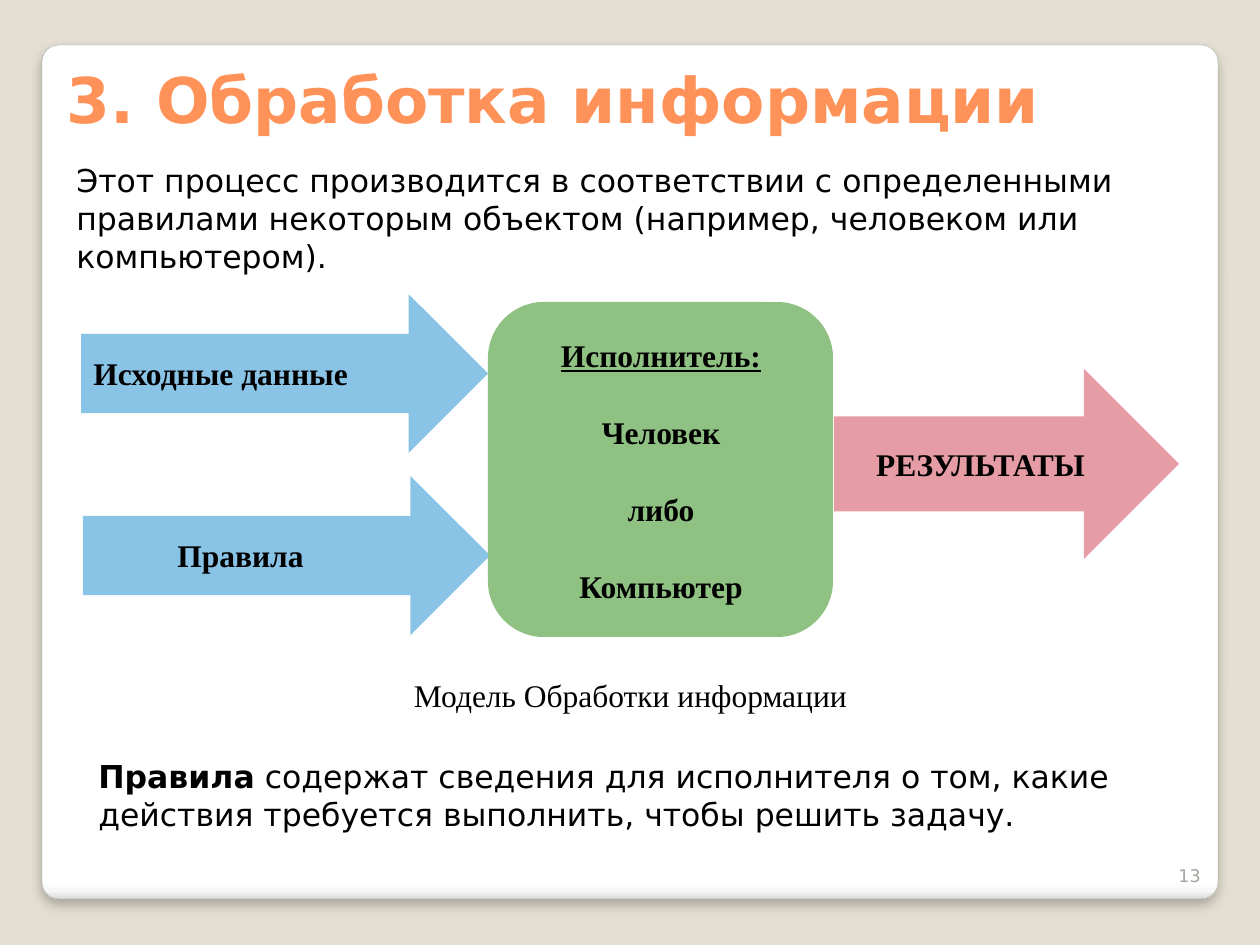
from copy import deepcopy

from pptx import Presentation
from pptx import util as u
from pptx.dml.color import RGBColor
from pptx.enum import shapes, text
from pptx.oxml import parse_xml
from pptx.oxml.ns import nsdecls

SAND = RGBColor(0xE3, 0xDE, 0xD1)
WHITE = RGBColor(0xFF, 0xFF, 0xFF)
MIST = RGBColor(0xF7, 0xF7, 0xF7)
SILVER = RGBColor(0xDA, 0xDA, 0xDA)
EDGE = RGBColor(0xA4, 0xA4, 0xA4)
ORANGE = RGBColor(0xFF, 0x92, 0x58)
BLACK = RGBColor(0x00, 0x00, 0x00)
BLUE = RGBColor(0x89, 0xC3, 0xE5)
GREEN = RGBColor(0x8E, 0xC1, 0x82)
PINK = RGBColor(0xE6, 0x9C, 0xA4)
GRAY = RGBColor(0xA8, 0xA4, 0x9B)

SANS, SERIF = "DejaVu Sans", "Times New Roman"
LEFT, MID, RIGHT = text.PP_ALIGN.LEFT, text.PP_ALIGN.CENTER, text.PP_ALIGN.RIGHT
TOP, CENTRE, BOTTOM = (text.MSO_ANCHOR.TOP, text.MSO_ANCHOR.MIDDLE,
                       text.MSO_ANCHOR.BOTTOM)
ROUND = shapes.MSO_SHAPE.ROUNDED_RECTANGLE
ARROW = shapes.MSO_SHAPE.RIGHT_ARROW

SHADE = f"""<a:outerShdw {nsdecls('a')} blurRad="76200" dist="50800" dir="5400000"
  algn="t" rotWithShape="0"><a:srgbClr val="000000"><a:alpha val="25000"/></a:srgbClr>
  </a:outerShdw>"""


class Page:
    """Holds the current slide and its text style; lengths are in px."""

    def __init__(self, deck, font=SANS, size=18, color=BLACK):
        self.slide = deck.slides.add_slide(deck.slide_layouts[6])
        self.font, self.size, self.color = font, size, color
        fill = self.slide.background.fill
        fill.solid()
        fill.fore_color.rgb = SAND

    @staticmethod
    def px(n):
        return u.Emu(round(n * 914400 / 126))

    def shape(self, kind, box, color):
        item = self.slide.shapes.add_shape(kind, *map(self.px, box))
        item.shadow.inherit = False
        item.fill.solid()
        item.fill.fore_color.rgb = color
        item.line.fill.background()
        return item

    def panel(self, box, stops):
        item = self.shape(ROUND, box, WHITE)
        item.adjustments[0] = 0.02
        item.line.color.rgb = EDGE
        item.line.width = u.Pt(0.16)
        item.fill.gradient()
        item.fill.gradient_angle = 270
        first = item.fill.gradient_stops[0]._gs
        for _ in stops[2:]:
            first.addnext(deepcopy(first))
        for stop, (place, color) in zip(item.fill.gradient_stops, stops):
            stop.position, stop.color.rgb = place, color
        item._element.xpath("./p:spPr/a:effectLst")[0].append(parse_xml(SHADE))

    def words(self, box, *lines, align=LEFT, anchor=TOP, wrap=True, gap=0,
              font=None, size=None, color=None, bold=False):
        """Each line is a string or a list of strings, one per run."""
        item = self.slide.shapes.add_textbox(*map(self.px, box))
        frame = item.text_frame
        frame.word_wrap, frame.vertical_anchor = wrap, anchor
        for i, line in enumerate(lines):
            para = frame.add_paragraph() if i else frame.paragraphs[0]
            para.alignment = align
            para.space_before = u.Pt(gap if i else 0)
            for part in [line] if isinstance(line, str) else line:
                run = para.add_run()
                run.text = part
                run.font.name = font or self.font
                run.font.size = u.Pt(size or self.size)
                run.font.color.rgb = color or self.color
                run.font.bold = bold
        return frame

    def label(self, box, *lines, **style):
        return self.words(box, *lines, font=SERIF, bold=True, **style)


def main():
    deck = Presentation()
    deck.slide_width, deck.slide_height = u.Inches(10), u.Inches(7.5)
    page = Page(deck)

    # Panel, title and introduction
    page.panel((42, 45, 1176, 854),
               [(0, WHITE), (0.98, WHITE), (0.99, MIST), (1, SILVER)])
    page.words((54, 50, 1128, 96), "3. Обработка информации",
               anchor=CENTRE, size=36, color=ORANGE, bold=True)
    page.words((64, 155, 1132, 127),
               "Этот процесс производится в соответствии с определенными "
               "правилами некоторым объектом (например, человеком или "
               "компьютером).")

    # Inputs
    for x, y, left, wide, name in ((81, 294, 81, 282, "Исходные данные"),
                                   (83, 476, 165, 154, "Правила")):
        page.shape(ARROW, (x, y, 407, 159), BLUE)
        page.label((left, y + 54, wide, 50), name, wrap=False)

    # Performer
    page.shape(ROUND, (488, 302, 345, 335), GREEN)
    actor = page.label((488, 330, 346, 280), "Исполнитель:", "Человек",
                       "либо", "Компьютер", align=MID, gap=22.4)
    actor.paragraphs[0].runs[0].font.underline = True

    # Results
    page.shape(ARROW, (834, 369, 345, 190), PINK)
    page.label((863, 439, 235, 50), "РЕЗУЛЬТАТЫ", align=MID, wrap=False)

    # Caption, note and page number
    page.words((295, 670, 671, 50), "Модель Обработки информации",
               align=MID, font=SERIF)
    note = page.words((86, 751, 1132, 89),
                      ["Правила", " содержат сведения для исполнителя о том, "
                       "какие действия требуется выполнить, чтобы решить "
                       "задачу."])
    note.paragraphs[0].runs[0].font.bold = True
    page.words((1150, 842, 63, 50), "13", align=RIGHT, anchor=BOTTOM,
               size=10, color=GRAY)

    deck.save("out.pptx")


if __name__ == "__main__":
    main()
